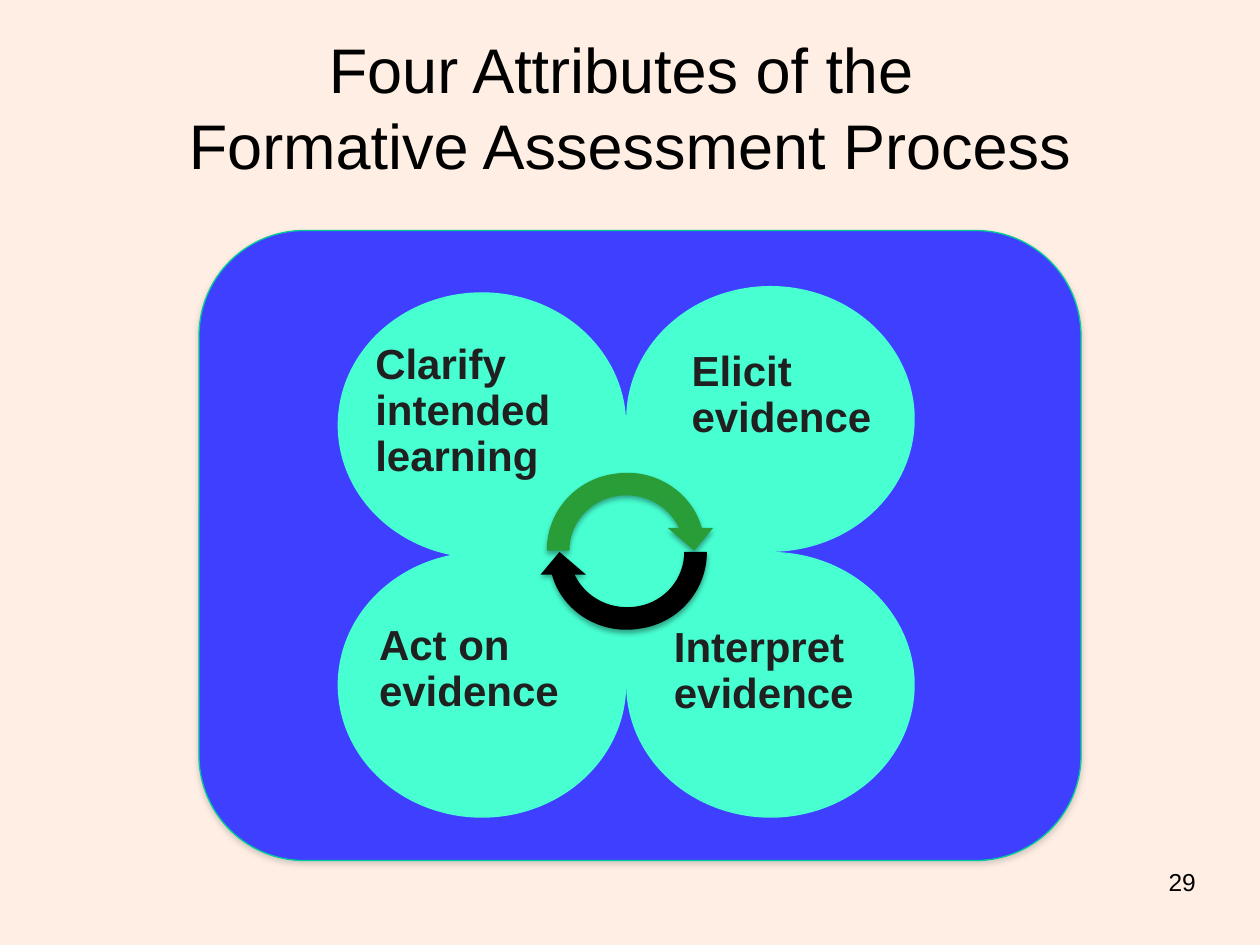
import pptx
import pptx.util
import pptx.dml.color
import pptx.enum.shapes
import pptx.enum.text
import pptx.oxml
import pptx.oxml.ns

Inches, Pt = pptx.util.Inches, pptx.util.Pt
SHAPE = pptx.enum.shapes.MSO_SHAPE
ALIGN = pptx.enum.text.PP_ALIGN
ANCHOR = pptx.enum.text.MSO_ANCHOR

COLORS = {
    "white": "FFFFFF",
    "backdrop": "FFEEE3",
    "panel": "3F3FFF",
    "panel_line": "00CC98",
    "panel_shadow": "808080",
    "petal": "47FFD1",
    "label": "202020",
    "green": "299D37",
    "black": "000000",
}
TITLE = "Four Attributes of the \vFormative Assessment Process"
PAGE_NUMBER = "29"
PETAL_SIZE = (2.29, 2.11)
LEFT_COLUMN = 2.68
RIGHT_COLUMN = LEFT_COLUMN + PETAL_SIZE[0]
PETALS = [
    {"at": (LEFT_COLUMN, 4.38), "flips": "", "lines": ["Act on", "evidence"], "label_at": (2.91, 5.03)},
    {"at": (LEFT_COLUMN, 2.32), "flips": "V", "lines": ["Clarify", "intended", "learning"],
     "label_at": (2.88, 2.8)},
    {"at": (RIGHT_COLUMN, 4.38), "flips": "H", "lines": ["Interpret", "evidence"], "label_at": (5.25, 5.05)},
    {"at": (RIGHT_COLUMN, 2.27), "flips": "HV", "lines": ["Elicit", "evidence"], "label_at": (5.39, 2.86)},
]
LABEL_WIDTH, LINE_HEIGHT = 1.89, 0.35
CYCLE_SIZE = (1.44, 1.42)
CYCLE_ARROWS = [("green", 4.25, 3.66, 0), ("black", 4.26, 3.67, 180)]
ARROW_START = (0.09, 0.71)
ARROW_STEPS = [
    [(0.09, 0.4), (0.32, 0.14), (0.63, 0.1)],
    [(0.94, 0.05), (1.24, 0.24), (1.32, 0.53)],
    [(1.41, 0.53)],
    [(1.26, 0.71)],
    [(1.05, 0.53)],
    [(1.14, 0.53)],
    [(1.05, 0.34), (0.84, 0.24), (0.63, 0.28)],
    [(0.42, 0.32), (0.27, 0.5), (0.27, 0.71)],
]


def color(name):
    return pptx.dml.color.RGBColor.from_string(COLORS[name])


def paint(shape, fill, line=None):
    shape.shadow.inherit = False
    shape.fill.solid()
    shape.fill.fore_color.rgb = color(fill)
    if line:
        shape.line.color.rgb = color(line)
        shape.line.width = Pt(0.75)
    else:
        shape.line.fill.background()


def add_shadow(shape, name):
    effects = shape._element.spPr.find(pptx.oxml.ns.qn("a:effectLst"))
    effects.append(pptx.oxml.parse_xml(
        f'<a:outerShdw {pptx.oxml.ns.nsdecls("a")} blurRad="{Pt(3.1)}" dist="{Pt(1.8)}" '
        f'dir="5400000" rotWithShape="0"><a:srgbClr val="{COLORS[name]}">'
        '<a:alpha val="35000"/></a:srgbClr></a:outerShdw>'))


def add_text(page, lines, left, top, width, height, size, name="black", align=ALIGN.LEFT,
             anchor=ANCHOR.TOP, bold=False, spacing=None, after=0):
    box = page.shapes.add_textbox(Inches(left), Inches(top), Inches(width), Inches(height))
    frame = box.text_frame
    frame.word_wrap = True
    frame.vertical_anchor = anchor
    for index, line in enumerate(lines):
        para = frame.add_paragraph() if index else frame.paragraphs[0]
        para.text = line
        para.alignment = align
        para.line_spacing = spacing
        para.space_after = Pt(after)
        para.font.name = "Arial"
        para.font.size = Pt(size)
        para.font.bold = bold
        para.font.color.rgb = color(name)


def point_xml(point):
    return f'<a:pt x="{Inches(point[0])}" y="{Inches(point[1])}"/>'


def curved_outline():
    width, height = map(Inches, CYCLE_SIZE)
    steps = f"<a:moveTo>{point_xml(ARROW_START)}</a:moveTo>"
    for step in ARROW_STEPS:
        tag = "cubicBezTo" if len(step) == 3 else "lnTo"
        steps += f"<a:{tag}>{''.join(map(point_xml, step))}</a:{tag}>"
    return pptx.oxml.parse_xml(
        f'<a:path {pptx.oxml.ns.nsdecls("a")} w="{width}" h="{height}">{steps}<a:close/></a:path>')


def add_cycle_arrow(page, name, left, top, rotation):
    builder = page.shapes.build_freeform(0, 0)
    builder.add_line_segments([tuple(map(Inches, CYCLE_SIZE))])
    arrow = builder.convert_to_shape(Inches(left), Inches(top))
    outlines = arrow._element.spPr.find(".//" + pptx.oxml.ns.qn("a:pathLst"))
    outlines.replace(outlines[0], curved_outline())
    arrow.rotation = rotation
    paint(arrow, name)
    add_shadow(arrow, "black")


def main():
    deck = pptx.Presentation()
    deck.slide_width, deck.slide_height = Inches(10), Inches(7.5)
    page = deck.slides.add_slide(deck.slide_layouts[6])
    page.background.fill.solid()
    page.background.fill.fore_color.rgb = color("white")
    backdrop = page.shapes.add_shape(SHAPE.RECTANGLE, 0, 0, deck.slide_width, deck.slide_height)
    paint(backdrop, "backdrop", "backdrop")

    panel = page.shapes.add_shape(SHAPE.ROUNDED_RECTANGLE, Inches(1.58), Inches(1.83),
                                  Inches(7), Inches(5))
    panel.adjustments[0] = 0.167
    paint(panel, "panel", "panel_line")
    add_shadow(panel, "panel_shadow")

    add_text(page, [TITLE], 0, 0.22, 10, 1.25, 36, align=ALIGN.CENTER, anchor=ANCHOR.MIDDLE)

    for petal in PETALS:
        shape = page.shapes.add_shape(SHAPE.TEAR, *map(Inches, petal["at"] + PETAL_SIZE))
        for flip in petal["flips"]:
            shape._element.spPr.xfrm.set(f"flip{flip}", "1")
        paint(shape, "petal")
    for petal in PETALS:
        add_text(page, petal["lines"], *petal["label_at"], LABEL_WIDTH,
                 LINE_HEIGHT * len(petal["lines"]), 24, "label",
                 bold=True, spacing=0.5, after=12)

    for arrow in CYCLE_ARROWS:
        add_cycle_arrow(page, *arrow)
    add_text(page, [PAGE_NUMBER], 7.76, 6.83, 1.83, 0.5, 14, align=ALIGN.RIGHT)
    deck.save("out.pptx")


if __name__ == "__main__":
    main()
